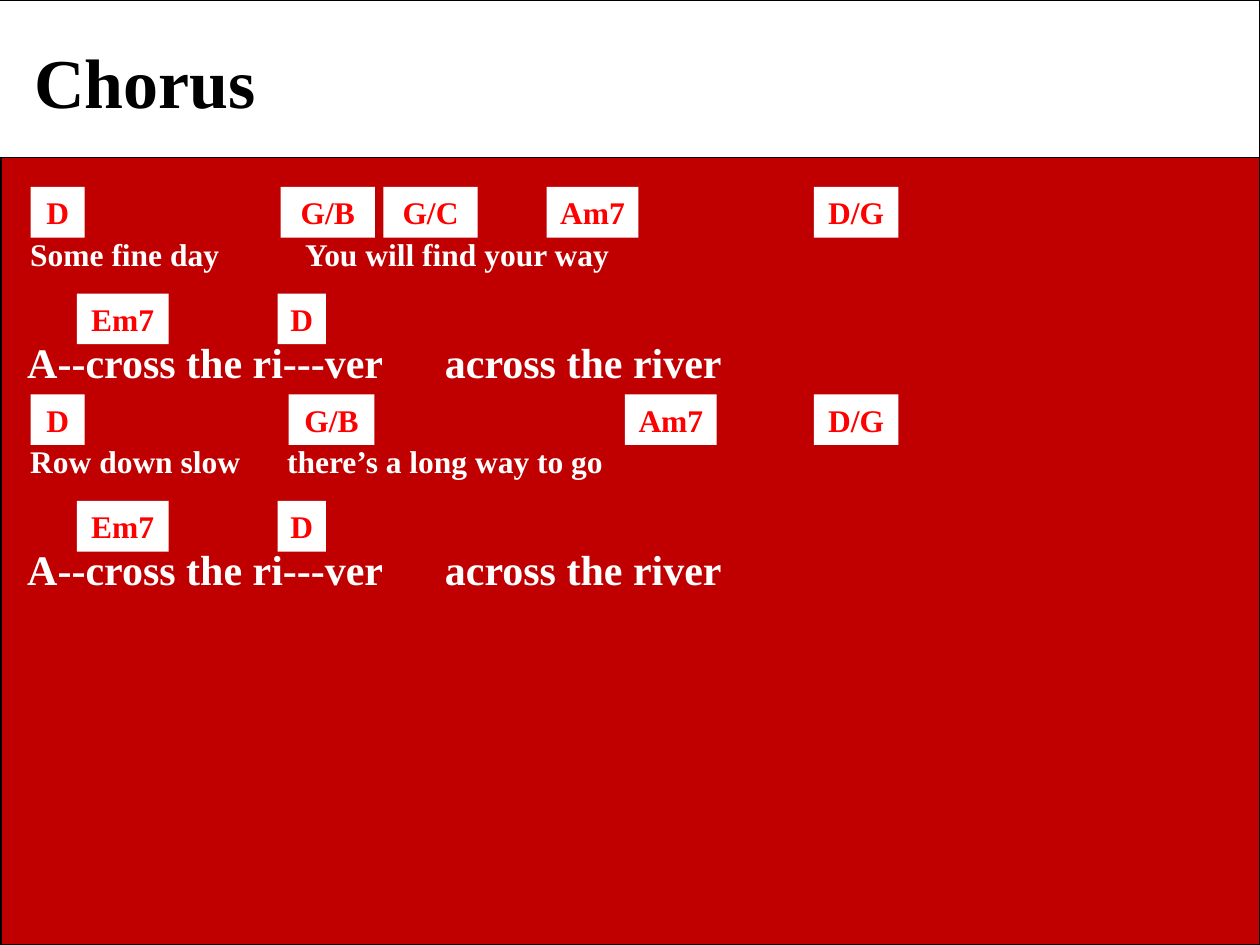
from dataclasses import dataclass

from lxml import etree
from pptx import Presentation
from pptx.dml.color import RGBColor
from pptx.enum.shapes import MSO_SHAPE
from pptx.enum.text import MSO_ANCHOR, MSO_AUTO_SIZE, PP_ALIGN
from pptx.oxml.ns import qn
from pptx.util import Cm, Pt

RECTANGLE = MSO_SHAPE.RECTANGLE
LEFT, CENTER = PP_ALIGN.LEFT, PP_ALIGN.CENTER
TOP = MSO_ANCHOR.TOP
GROW, FIXED = MSO_AUTO_SIZE.SHAPE_TO_FIT_TEXT, MSO_AUTO_SIZE.NONE
TITLE_ONLY = 5


@dataclass(frozen=True)
class Theme:
    font: str = "Times New Roman"
    white: RGBColor = RGBColor(255, 255, 255)
    black: RGBColor = RGBColor(0, 0, 0)
    panel: RGBColor = RGBColor(192, 0, 0)
    chord: RGBColor = RGBColor(255, 0, 0)
    title_size: int = 40
    refrain_size: int = 24
    verse_size: int = 18


THEME = Theme()
PAGE_WIDTH, PAGE_HEIGHT, HEADER_HEIGHT = 25.4, 19.05, 3.18
CHIP_HEIGHT, LYRIC_HEIGHT = 1.02, 1.27
VERSE_LEFT, REFRAIN_LEFT, LYRIC_MARGIN = 0.2, 0.14, 0.41
FIRST_TOP, STANZA_PITCH = 3.77, 4.18
VERSE_DROP, REFRAIN_CHORD_DROP, REFRAIN_DROP = 0.84, 2.15, 2.88

# Each stanza: verse line, its tab stop, and chords as (name, left, width) in cm.
STANZAS = [
    ("Some fine day\tYou will find your way", 5.54,
     [("D", 0.62, 1.09), ("G/B", 5.66, 1.9), ("G/C", 7.73, 1.9),
      ("Am7", 11.02, 1.85), ("D/G", 16.41, 1.7)]),
    ("Row down slow\tthere’s a long way to go", 5.18,
     [("D", 0.62, 1.09), ("G/B", 5.82, 1.73),
      ("Am7", 12.6, 1.85), ("D/G", 16.41, 1.7)]),
]
REFRAIN = "A--cross the ri---ver\tacross the river"
REFRAIN_TAB = 8.42
REFRAIN_CHORDS = [("Em7", 1.55, 1.85), ("D", 5.6, 0.97)]


def set_attributes(target, values):
    for name, value in values.items():
        setattr(target, name, value)


def set_spacing(para, tab=None):
    """Put half a line before the paragraph and add an optional tab stop."""
    properties = para._p.get_or_add_pPr()
    before = etree.SubElement(properties, qn("a:spcBef"))
    etree.SubElement(before, qn("a:spcPct"), val="50000")
    if tab is not None:
        tabs = etree.SubElement(properties, qn("a:tabLst"))
        etree.SubElement(tabs, qn("a:tab"), pos=str(Cm(tab)), algn="l")


def write_text(shape, text, size, color, alignment=LEFT, margin=0.25,
               tab=None, fit=GROW):
    frame = shape.text_frame
    set_attributes(frame, {
        "word_wrap": True, "auto_size": fit, "vertical_anchor": TOP,
        "margin_left": Cm(margin), "margin_right": Cm(margin),
    })
    para = frame.paragraphs[0]
    para.alignment = alignment
    set_spacing(para, tab)
    span = para.add_run()
    span.text = text
    set_attributes(span.font, {"name": THEME.font, "size": Pt(size), "bold": True})
    span.font.color.rgb = color


def add_box(page, left, top, width, height, fill, outline=None):
    box = page.shapes.add_shape(RECTANGLE, Cm(left), Cm(top), Cm(width), Cm(height))
    box.shadow.inherit = False
    box.fill.solid()
    box.fill.fore_color.rgb = fill
    if outline is None:
        box.line.fill.background()
    else:
        box.line.color.rgb = outline
        box.line.width = Pt(0.75)
    return box


def add_title(page, text):
    title = page.shapes.title
    set_attributes(title, {"left": Cm(0.44), "top": Cm(0.64),
                           "width": Cm(8.46), "height": Cm(1.96)})
    title.fill.solid()
    title.fill.fore_color.rgb = THEME.white
    write_text(title, text, THEME.title_size, THEME.black, fit=FIXED)
    # The title belongs in front of the header band.
    page.shapes.element.append(title.element)


def add_lyric(page, text, left, top, size, tab):
    box = page.shapes.add_textbox(Cm(left), Cm(top),
                                  Cm(PAGE_WIDTH), Cm(LYRIC_HEIGHT))
    write_text(box, text, size, THEME.white, margin=LYRIC_MARGIN, tab=tab)


def add_chords(page, chords, top):
    for name, left, width in chords:
        chip = add_box(page, left, top, width, CHIP_HEIGHT, THEME.white)
        write_text(chip, name, THEME.verse_size, THEME.chord, CENTER, margin=0.1)


def add_stanza(page, top, verse, tab, chords):
    add_lyric(page, verse, VERSE_LEFT, top + VERSE_DROP, THEME.verse_size, tab)
    add_lyric(page, REFRAIN, REFRAIN_LEFT, top + REFRAIN_DROP,
              THEME.refrain_size, REFRAIN_TAB)
    add_chords(page, chords, top)
    add_chords(page, REFRAIN_CHORDS, top + REFRAIN_CHORD_DROP)


def main():
    deck = Presentation()
    deck.slide_width, deck.slide_height = Cm(PAGE_WIDTH), Cm(PAGE_HEIGHT)
    page = deck.slides.add_slide(deck.slide_layouts[TITLE_ONLY])
    add_box(page, 0.02, HEADER_HEIGHT, PAGE_WIDTH - 0.02,
            PAGE_HEIGHT - HEADER_HEIGHT, THEME.panel, THEME.black)
    add_box(page, -0.02, 0, PAGE_WIDTH + 0.02, HEADER_HEIGHT,
            THEME.white, THEME.black)
    add_title(page, "Chorus")
    for index, stanza in enumerate(STANZAS):
        add_stanza(page, FIRST_TOP + index * STANZA_PITCH, *stanza)
    deck.save("out.pptx")


if __name__ == "__main__":
    main()
